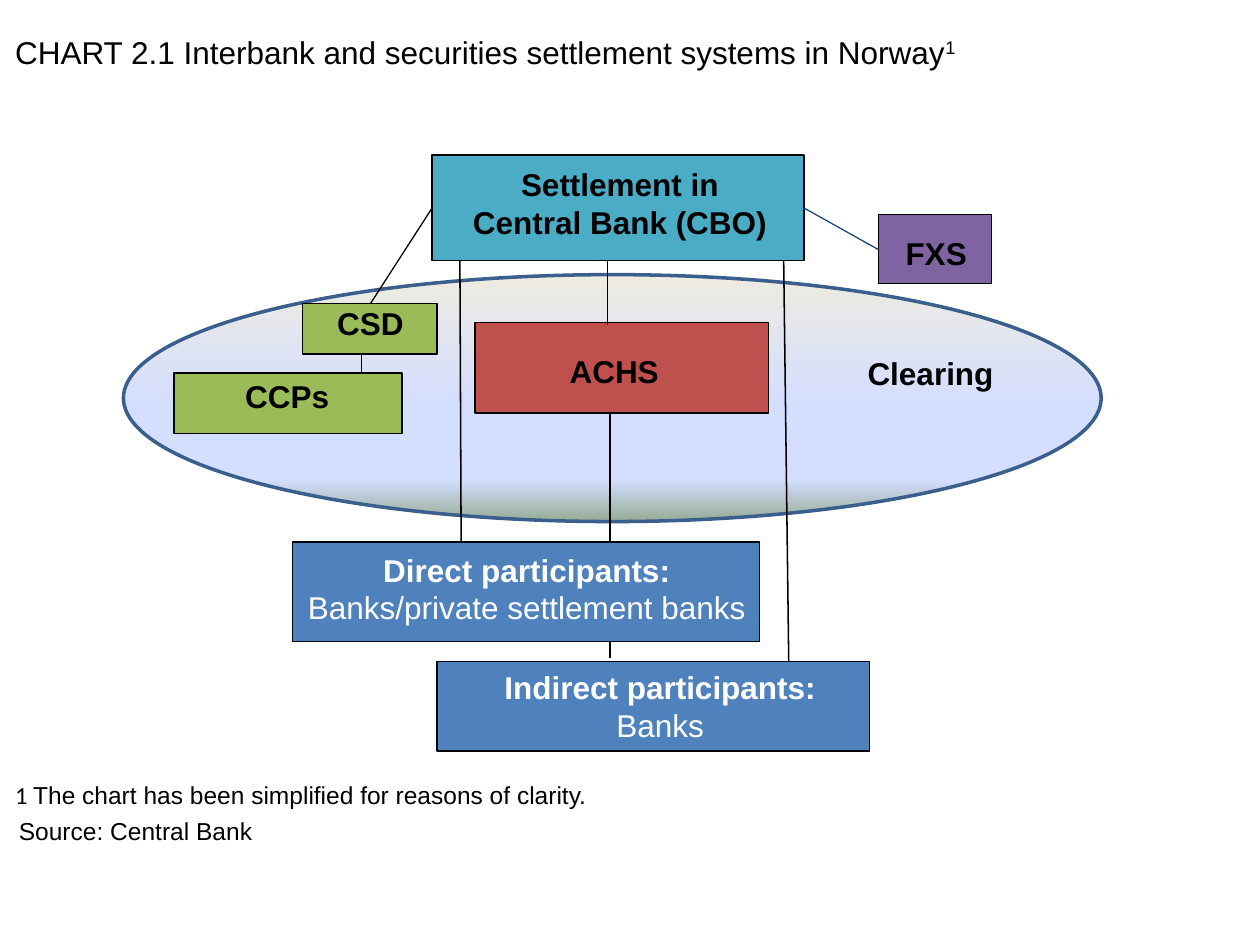
from pptx import Presentation
from pptx.dml.color import RGBColor as RGB
from pptx.enum.shapes import MSO_CONNECTOR as CONN, MSO_SHAPE as SHAPE
from pptx.enum.text import PP_ALIGN as ALIGN
from pptx.oxml import parse_xml
from pptx.oxml.ns import nsdecls
from pptx.util import Inches, Pt
from lxml.etree import SubElement

BLACK, WHITE = RGB(0, 0, 0), RGB(255, 255, 255)
TEAL, RED = RGB(0x4B, 0xAC, 0xC6), RGB(0xC0, 0x50, 0x4D)
GREEN, PURPLE = RGB(0x9B, 0xBB, 0x59), RGB(0x80, 0x64, 0xA2)
BLUE, NAVY = RGB(0x4F, 0x81, 0xBD), RGB(0x1F, 0x49, 0x7D)
RIM = RGB(0x3A, 0x5F, 0x8C)
STOPS = [(0, RGB(0xEE, 0xEC, 0xE1)), (53, RGB(0xD4, 0xDE, 0xFF)),
         (83, RGB(0xD4, 0xDE, 0xFF)), (100, RGB(0x96, 0xAB, 0x94))]
THIN, EDGE = 0.75, 0.88

# place, fill, line width
BOXES = [
    ((6.97, 1.7, 0.9, 0.55), PURPLE, THIN),
    ((3.43, 1.23, 2.95, 0.84), TEAL, EDGE),
    ((3.77, 2.56, 2.33, 0.72), RED, EDGE),
    ((2.32, 4.3, 3.71, 0.79), BLUE, EDGE),
    ((2.4, 2.41, 1.07, 0.4), GREEN, EDGE),
    ((1.38, 2.96, 1.81, 0.48), GREEN, EDGE),
    ((3.47, 5.25, 3.43, 0.71), BLUE, EDGE),
]
# place, lines of (text, bold), colour
LABELS = [
    ((3.58, 1.31, 2.68, 0.61),
     [("Settlement in", True), ("Central Bank (CBO)", True)], BLACK),
    ((3.86, 2.79, 2.03, 0.31), [("ACHS", True)], BLACK),
    ((2.37, 4.37, 3.62, 0.61),
     [("Direct participants:", True),
      ("Banks/private settlement banks", False)], WHITE),
    ((2.48, 2.41, 0.92, 0.3), [("CSD", True)], BLACK),
    ((6.97, 1.86, 0.92, 0.31), [("FXS", True)], BLACK),
    ((0.98, 2.99, 2.6, 0.3), [("CCPs", True)], BLACK),
    ((3.58, 5.3, 3.32, 0.61),
     [("Indirect participants:", True), ("Banks", False)], WHITE),
    ((6.34, 2.81, 2.09, 0.3), [("Clearing", True)], BLACK),
]
# start, end, colour, width
LINKS = [
    ((6.38, 1.65), (6.97, 1.98), NAVY, THIN),
    ((3.43, 1.65), (2.94, 2.41), BLACK, THIN),
    ((3.65, 2.07), (3.66, 4.3), BLACK, EDGE),
    ((6.22, 2.07), (6.26, 5.25), BLACK, EDGE),
    ((4.82, 2.07), (4.82, 2.58), BLACK, EDGE),
    ((4.84, 3.28), (4.84, 4.3), BLACK, EDGE),
    ((4.84, 5.09), (4.84, 5.22), BLACK, EDGE),
    ((2.87, 2.81), (2.87, 2.96), BLACK, EDGE),
]


def add_shape(slide, kind, place, color, width):
    shape = slide.shapes.add_shape(kind, *map(Inches, place))
    shape.shadow.inherit = False
    shape.line.color.rgb = color
    shape.line.width = Pt(width)
    return shape


def add_box(slide, place, fill, width):
    box = add_shape(slide, SHAPE.RECTANGLE, place, BLACK, width)
    box.fill.solid()
    box.fill.fore_color.rgb = fill


def add_oval(slide, place):
    """Draw the clearing area, shaded from top to bottom."""
    oval = add_shape(slide, SHAPE.OVAL, place, RIM, 2)
    oval.fill.gradient()
    stops = "".join(
        f'<a:gs pos="{pos * 1000}"><a:srgbClr val="{color}"/></a:gs>'
        for pos, color in STOPS)
    grad = parse_xml(
        f'<a:gradFill {nsdecls("a")}><a:gsLst>{stops}</a:gsLst>'
        '<a:lin ang="5400000" scaled="0"/></a:gradFill>')
    props = oval._element.spPr
    props.replace(props.gradFill, grad)


def add_frame(slide, place, pad=0):
    """Return the frame of a new wrapped text box."""
    frame = slide.shapes.add_textbox(*map(Inches, place)).text_frame
    frame.word_wrap = True
    frame.margin_left = frame.margin_right = 0
    frame.margin_top = frame.margin_bottom = Inches(pad)
    return frame


def set_font(para, size, color=BLACK, bold=False):
    font = para.font
    font.name, font.size, font.bold = "Arial", Pt(size), bold
    font.color.rgb = color


def add_label(slide, place, lines, color):
    frame = add_frame(slide, place)
    for i, (text, bold) in enumerate(lines):
        para = frame.add_paragraph() if i else frame.paragraphs[0]
        para.text = text
        para.alignment = ALIGN.CENTER
        set_font(para, 18, color, bold)


def add_note(slide, place, size, parts, pad=0):
    """Add a left-aligned line and return its runs."""
    para = add_frame(slide, place, pad).paragraphs[0]
    set_font(para, size)
    for part in parts:
        para.add_run().text = part
    return para.runs


def add_link(slide, start, end, color, width):
    link = slide.shapes.add_connector(
        CONN.STRAIGHT, *map(Inches, start + end))
    link.line.color.rgb = color
    link.line.width = Pt(width)
    props = link._element.spPr
    SubElement(props, props.nsmap["a"].join("{}") + "effectLst")


def main():
    deck = Presentation()
    deck.slide_width, deck.slide_height = Inches(10), Inches(7.5)
    slide = deck.slides.add_slide(deck.slide_layouts[6])

    title = "CHART 2.1 Interbank and securities settlement systems in Norway"
    runs = add_note(slide, (0.12, 0.21, 9.57, 0.52), 18, [title, "1"], 0.05)
    runs[1]._r.get_or_add_rPr().set("baseline", "30000")

    add_oval(slide, (0.98, 2.18, 7.76, 1.96))
    for box in BOXES:
        add_box(slide, *box)
    for label in LABELS:
        add_label(slide, *label)
    for link in LINKS:
        add_link(slide, *link)

    note = "The chart has been simplified for reasons of clarity."
    runs = add_note(slide, (0.12, 6.19, 9.88, 0.13), 14, ["1 ", note])
    runs[0].font.name = "Calibri"
    add_note(slide, (0.15, 6.43, 9.84, 0.58), 14,
             ["Source: Central Bank"], 0.05)
    deck.save("out.pptx")


if __name__ == "__main__":
    main()
